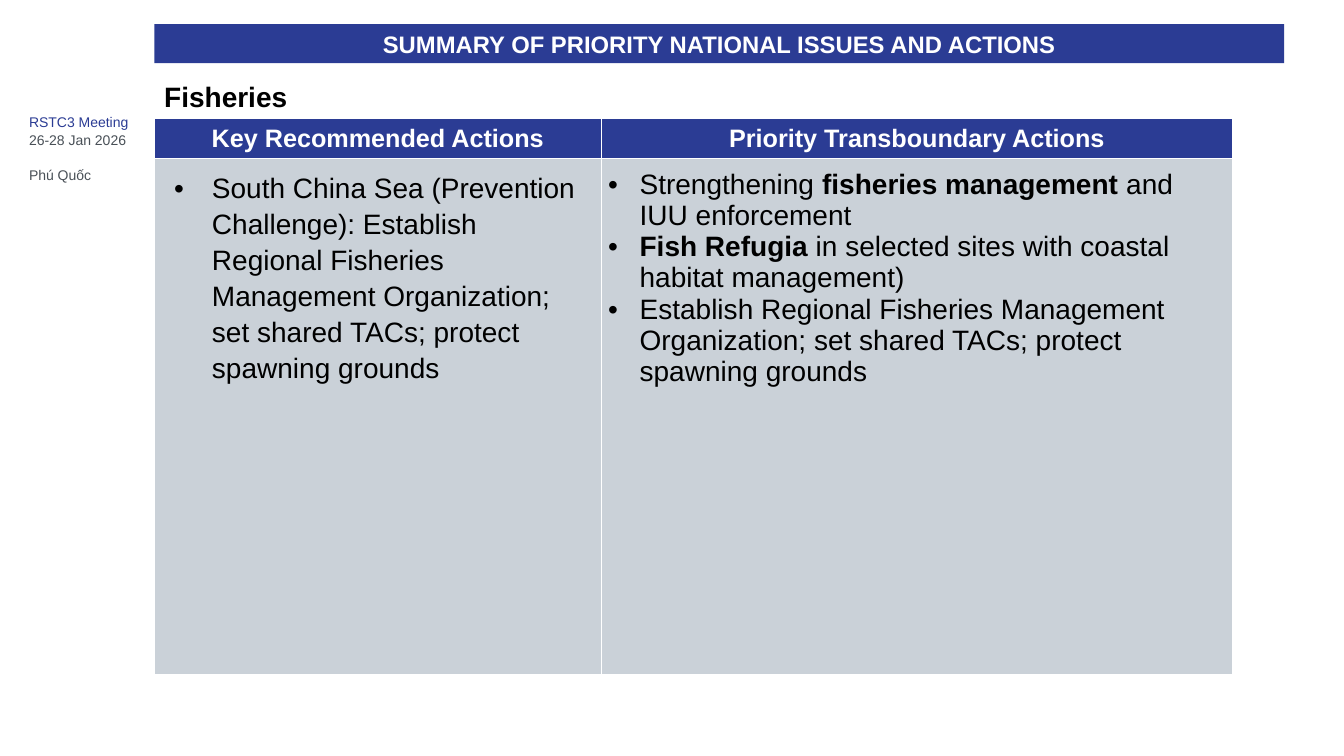
import pptx
import pptx.dml.color
import pptx.enum.shapes
import pptx.enum.text
import pptx.oxml
import pptx.util

Pt = pptx.util.Pt
ALIGN = pptx.enum.text.PP_ALIGN
ANCHOR = pptx.enum.text.MSO_ANCHOR
AUTO_SIZE = pptx.enum.text.MSO_AUTO_SIZE
XMLNS = 'xmlns:a="http://schemas.openxmlformats.org/drawingml/2006/main"'
NAVY, WHITE, BLACK, GRAY, PALE = "2B3C94", "FFFFFF", "000000", "495057", "CAD1D8"


def color(hex_value):
    return pptx.dml.color.RGBColor.from_string(hex_value)


def write(para, spans, size, hex_value, **layout):
    """Fill a paragraph with (text, bold) spans and set its paragraph format."""
    for name, value in layout.items():
        setattr(para, name, value)
    for text, bold in spans:
        span = para.add_run()
        span.text = text
        font_format = {"name": "Arial", "size": Pt(size), "bold": bold}
        for name, value in font_format.items():
            setattr(span.font, name, value)
        span.font.color.rgb = color(hex_value)


deck = pptx.Presentation()
deck.slide_width, deck.slide_height = Pt(960), Pt(540)
page = deck.slides.add_slide(deck.slide_layouts[6])

# Meeting details in the left margin
meeting = page.shapes.add_textbox(Pt(13.7), Pt(77), Pt(96.5), Pt(44)).text_frame
meeting.word_wrap = True
meeting_lines = [("RSTC3 Meeting", NAVY, 0), ("26-28 Jan 2026", GRAY, 0), ("Phú Quốc", GRAY, 12)]
for index, (text, hex_value, gap) in enumerate(meeting_lines):
    para = meeting.add_paragraph() if index else meeting.paragraphs[0]
    write(para, [(text, False)], 10, hex_value, line_spacing=1.07, space_before=Pt(gap))

# Table of actions: a heading and bulleted items per column
columns = [
    {
        "heading": "Key Recommended Actions",
        "width": 319,
        "indent": (36, -27),
        "line_spacing": 1.15,
        "items": [
            [("South China Sea (Prevention Challenge): Establish Regional Fisheries Management "
              "Organization; set shared TACs; protect spawning grounds", False)],
        ],
    },
    {
        "heading": "Priority Transboundary Actions",
        "width": 451.2,
        "indent": (22.5, -22.5),
        "line_spacing": 1.0,
        "items": [
            [("Strengthening ", False), ("fisheries management ", True),
             ("and IUU enforcement", False)],
            [("Fish Refugia", True),
             (" in selected sites with coastal habitat management)", False)],
            [("Establish Regional Fisheries Management Organization; set shared TACs; "
              "protect spawning grounds", False)],
        ],
    },
]
table = page.shapes.add_table(2, 2, Pt(110.4), Pt(84.6), Pt(770.2), Pt(396.7)).table
table.first_row = table.horz_banding = False
table.rows[0].height, table.rows[1].height = Pt(28.1), Pt(368.6)

for col, column in enumerate(columns):
    table.columns[col].width = Pt(column["width"])
    heading_cell, items_cell = table.cell(0, col), table.cell(1, col)

    for cell, fill, border in ((heading_cell, NAVY, 1), (items_cell, PALE, 0.75)):
        for edge in ("lnL", "lnR", "lnT", "lnB"):
            width = Pt(0.75 if edge == "lnB" else border)
            cell._tc.get_or_add_tcPr().append(pptx.oxml.parse_xml(
                f'<a:{edge} {XMLNS} w="{width}"><a:solidFill><a:srgbClr val="{WHITE}"/>'
                f'</a:solidFill></a:{edge}>'))
        cell.fill.solid()
        cell.fill.fore_color.rgb = color(fill)

    heading_cell.vertical_anchor = ANCHOR.MIDDLE
    write(heading_cell.text_frame.paragraphs[0], [(column["heading"], True)], 18, WHITE,
          alignment=ALIGN.CENTER)

    items_cell.margin_left = items_cell.margin_right = Pt(5)
    items_cell.margin_top = items_cell.margin_bottom = Pt(7.2)
    left, hanging = column["indent"]
    for index, spans in enumerate(column["items"]):
        frame = items_cell.text_frame
        para = frame.add_paragraph() if index else frame.paragraphs[0]
        props = para._p.get_or_add_pPr()
        props.set("marL", str(Pt(left)))
        props.set("indent", str(Pt(hanging)))
        for bullet in (f'<a:buClr {XMLNS}><a:srgbClr val="{BLACK}"/></a:buClr>',
                       f'<a:buFont {XMLNS} typeface="Arial"/>',
                       f'<a:buChar {XMLNS} char="•"/>'):
            props.append(pptx.oxml.parse_xml(bullet))
        write(para, spans, 20, BLACK, line_spacing=column["line_spacing"])

# Title bar
title = page.shapes.add_shape(pptx.enum.shapes.MSO_SHAPE.RECTANGLE,
                              Pt(110.2), Pt(17.2), Pt(807.1), Pt(28))
title.shadow.inherit = False
title.fill.solid()
title.fill.fore_color.rgb = color(NAVY)
title.line.fill.background()
title.text_frame.word_wrap = True
title.text_frame.vertical_anchor = ANCHOR.MIDDLE
write(title.text_frame.paragraphs[0],
      [("SUMMARY OF PRIORITY NATIONAL ISSUES AND ACTIONS", True)], 17, WHITE,
      alignment=ALIGN.CENTER)

# Topic above the table
topic = page.shapes.add_textbox(Pt(110.2), Pt(53.5), Pt(103), Pt(31.5)).text_frame
topic.word_wrap = False
write(topic.paragraphs[0], [("Fisheries", True)], 20, BLACK)

for frame in (meeting, title.text_frame, topic):
    frame.auto_size = AUTO_SIZE.SHAPE_TO_FIT_TEXT

deck.save("out.pptx")
